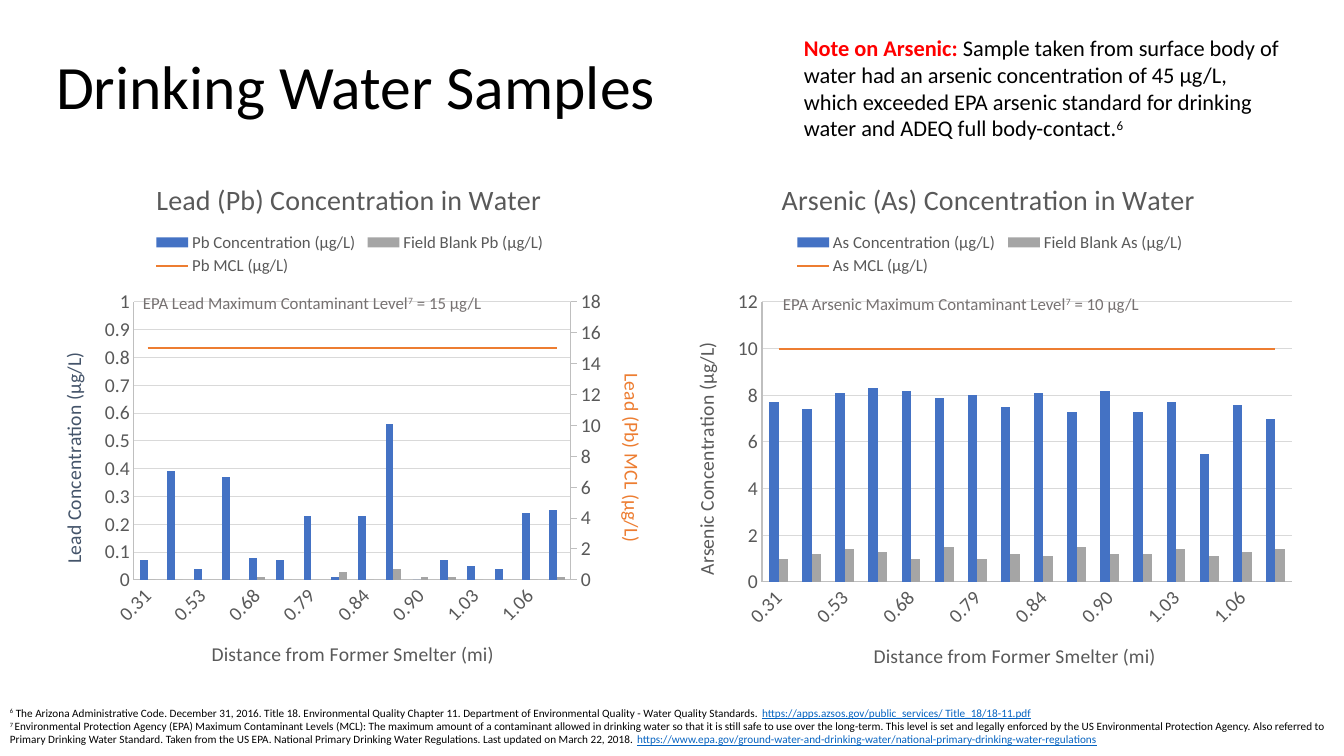
import copy
import pptx
import pptx.util
import pptx.chart.axis
import pptx.chart.data
from pptx.dml.color import RGBColor
from pptx.enum.chart import XL_CHART_TYPE, XL_LEGEND_POSITION, XL_MARKER_STYLE, XL_TICK_MARK
from pptx.enum.text import MSO_ANCHOR, PP_ALIGN
from pptx.oxml import parse_xml
from pptx.oxml.ns import nsdecls, qn

THEME = {
    "font": "Calibri",
    "black": "000000", "red": "FF0000", "link": "0563C1", "caption": "767171",
    "label": "595959", "navy": "44546A", "axis": "BFBFBF", "grid": "D9D9D9",
    "sample": "4472C4", "blank": "A5A5A5", "limit": "ED7D31",
    "title_pt": 44, "chart_title_pt": 20, "note_pt": 16, "axis_pt": 14,
    "caption_pt": 12, "chart_pt": 10, "footnote_pt": 8,
}
PX_PER_INCH = 100.8
SLIDE_SIZE = (1344, 756)
TITLE = "Drinking Water Samples"
TITLE_BOX = (46, 17, 647, 146)
DISTANCE_TITLE = "Distance from Former Smelter (mi)"
DISTANCES = [0.31, 0.37, 0.53, 0.59, 0.68, 0.7, 0.79, 0.83,
             0.84, 0.86, 0.9, 0.96, 1.03, 1.03, 1.06, 31.84]

# Plot and legend boxes are in slide px, like the chart box.
METALS = [
    dict(name="Arsenic", symbol="As", box=(672, 159, 633, 532), plot=(762, 302, 530, 280),
         legend=(790, 229, 400, 50), color="label", top=None, limit=10, limit_axis=None,
         samples=[7.7, 7.4, 8.1, 8.3, 8.2, 7.9, 8, 7.5, 8.1, 7.3, 8.2, 7.3, 7.7, 5.5, 7.6, 7],
         blanks=[1, 1.2, 1.4, 1.3, 1, 1.5, 1, 1.2, 1.1, 1.5, 1.2, 1.2, 1.4, 1.1, 1.3, 1.4]),
    dict(name="Lead", symbol="Pb", box=(39, 159, 620, 530), plot=(134, 302, 437, 278),
         legend=(150, 229, 400, 50), color="navy", top=1, limit=15,
         limit_axis=("Lead (Pb) MCL (µg/L)", 0, 18),
         samples=[0.07, 0.39, 0.04, 0.37, 0.08, 0.07, 0.23, 0.01,
                  0.23, 0.56, 0, 0.07, 0.05, 0.04, 0.24, 0.25],
         blanks=[0, 0, 0, 0, 0.01, 0, 0, 0.03, 0, 0.04, 0.01, 0.01, 0, 0, 0, 0.01]),
]

# Each run is its text followed by its styles: a theme colour, "bold", "super" or "underline".
TEXTS = [
    ((133, 288, 386, 27), "caption_pt", "caption",
     [[("EPA Lead Maximum Contaminant Level",), ("7", "super"), (" = 15 µg/L",)]]),
    ((773, 289, 386, 27), "caption_pt", "caption",
     [[("EPA Arsenic Maximum Contaminant Level",), ("7", "super"), (" = 10 µg/L",)]]),
    ((0, 701, 1344, 50), "footnote_pt", "black", [
        [("6", "super"),
         (" The Arizona Administrative Code. December 31, 2016. Title 18. Environmental Quality "
          "Chapter 11. Department of Environmental Quality - Water Quality Standards. ",),
         ("https://apps.azsos.gov/public_services/ Title_18/18-11.pdf", "link", "underline")],
        [("7 ", "super"),
         ("Environmental Protection Agency (EPA) Maximum Contaminant Levels (MCL): The maximum "
          "amount of a contaminant allowed in drinking water so that it is still safe to use over "
          "the long-term. This level is set and legally enforced by the US Environmental "
          "Protection Agency. Also referred to Primary Drinking Water Standard. Taken from the US "
          "EPA. National Primary Drinking Water Regulations. Last updated on March 22, 2018. ",),
         ("https://www.epa.gov/ground-water-and-drinking-water/"
          "national-primary-drinking-water-regulations", "link", "underline")]]),
    ((794, 29, 498, 119), "note_pt", "black",
     [[("Note on Arsenic:", "red", "bold"),
       (" Sample taken from surface body of water had an arsenic concentration of 45 µg/L, which "
        "exceeded EPA arsenic standard for drinking water and ADEQ full body-contact.",),
       ("6", "super")]]),
]

def px(*lengths):
    return [pptx.util.Emu(round(n * 914400 / PX_PER_INCH)) for n in lengths]

def rgb(color):
    return RGBColor.from_string(THEME[color])

def style_font(font, size, color, bold=False):
    font.name, font.size, font.bold = THEME["font"], pptx.util.Pt(THEME[size]), bold
    font.color.rgb = rgb(color)

def style_line(line, color, width=0.75):
    line.color.rgb, line.width = rgb(color), pptx.util.Pt(width)

def add_text(slide, box, size, color, paragraphs):
    frame = slide.shapes.add_textbox(*px(*box)).text_frame
    frame.word_wrap = True
    for index, runs in enumerate(paragraphs):
        paragraph = frame.add_paragraph() if index else frame.paragraphs[0]
        for text, *styles in runs:
            run = paragraph.add_run()
            run.text = text
            run_color = next((style for style in styles if style in THEME), color)
            style_font(run.font, size, run_color, "bold" in styles)
            run.font.underline = "underline" in styles
            if "super" in styles:
                run.font._element.set("baseline", "30000")

def set_title(title, text, size, color, degrees=0):
    title.text_frame.text = text
    style_font(title.text_frame.paragraphs[0].runs[0].font, size, color)
    body = title.text_frame._txBody.find(qn("a:bodyPr"))
    body.set("rot", str(degrees * 60000))
    body.set("vert", "horz")

def style_axis(axis, title, color, degrees):
    set_title(axis.axis_title, title, "axis_pt", color, degrees)
    style_font(axis.tick_labels.font, "axis_pt", "label")
    style_line(axis.format.line, "axis")
    axis.major_tick_mark = axis.minor_tick_mark = XL_TICK_MARK.NONE

def drop(parent, tag):
    for child in parent.findall(qn(tag)):
        parent.remove(child)

def layout_xml(box, chart_box, target=""):
    """Manual layout with the box as shares of the chart box."""
    left, top, width, height = chart_box
    shares = dict(x=(box[0] - left) / width, y=(box[1] - top) / height,
                  w=box[2] / width, h=box[3] / height)
    values = "".join(f'<c:{key} val="{share:.4f}"/>' for key, share in shares.items())
    return parse_xml(f'<c:layout {nsdecls("c")}><c:manualLayout>{target}<c:xMode val="edge"/>'
                     f'<c:yMode val="edge"/>{values}</c:manualLayout></c:layout>')

def move_limit_to_line(plot_area):
    bars = plot_area.find(qn("c:barChart"))
    limit = bars.findall(qn("c:ser"))[-1]
    drop(limit, "c:invertIfNegative")
    line = parse_xml(f'<c:lineChart {nsdecls("c")}><c:grouping val="standard"/>'
                     '<c:varyColors val="0"/><c:marker val="1"/></c:lineChart>')
    line.insert(2, limit)
    line.extend(copy.deepcopy(bars.findall(qn("c:axId"))))
    bars.addnext(line)
    return line

def add_limit_axis(plot_area, line, title, low, high):
    """Give the limit line its own value axis on the right."""
    first_axes = [plot_area.find(qn(tag)) for tag in ("c:catAx", "c:valAx")]
    distance, value = copy.deepcopy(first_axes)
    second = {axis.find(qn("c:axId")).get("val"): str(5001 + index)
              for index, axis in enumerate(first_axes)}
    linked = [axis.find(qn(tag)) for axis in (distance, value) for tag in ("c:axId", "c:crossAx")]
    for node in linked + line.findall(qn("c:axId")):
        node.set("val", second[node.get("val")])
    first_axes[1].addnext(value)
    value.addnext(distance)
    distance.find(qn("c:delete")).set("val", "1")
    drop(distance, "c:title")
    value.find(qn("c:axPos")).set("val", "r")
    value.find(qn("c:crosses")).set("val", "max")
    right = pptx.chart.axis.ValueAxis(value)
    right.has_major_gridlines = False
    style_axis(right, title, "limit", 90)
    right.major_tick_mark = XL_TICK_MARK.OUTSIDE
    right.minimum_scale, right.maximum_scale = low, high

def add_metal_chart(slide, metal):
    name, symbol, box = metal["name"], metal["symbol"], metal["box"]
    data = pptx.chart.data.CategoryChartData()
    data.categories = DISTANCES
    data.categories.number_format = "0.00"
    data.add_series(f"{symbol} Concentration (µg/L)", metal["samples"])
    data.add_series(f"Field Blank {symbol} (µg/L)", metal["blanks"])
    data.add_series(f"{symbol} MCL (µg/L)", [metal["limit"]] * len(DISTANCES))
    chart = slide.shapes.add_chart(XL_CHART_TYPE.COLUMN_CLUSTERED, *px(*box), data).chart
    style_font(chart.font, "chart_pt", "black")
    set_title(chart.chart_title, f"{name} ({symbol}) Concentration in Water",
              "chart_title_pt", "label")
    chart.has_legend = True
    chart.legend.position, chart.legend.include_in_layout = XL_LEGEND_POSITION.TOP, False
    style_font(chart.legend.font, "caption_pt", "label")

    distance, value = chart.category_axis, chart.value_axis
    style_axis(distance, DISTANCE_TITLE, "label", 0)
    distance.tick_labels.number_format = "0.00"
    distance.tick_labels.number_format_is_linked = False
    style_axis(value, f"{name} Concentration (µg/L)", metal["color"], -90)
    style_line(value.major_gridlines.format.line, "grid")
    value.minimum_scale, value.maximum_scale = 0, metal["top"]

    plot_area, legend = (chart.element.find(".//" + qn(t)) for t in ("c:plotArea", "c:legend"))
    line = move_limit_to_line(plot_area)
    if metal["limit_axis"]:
        add_limit_axis(plot_area, line, *metal["limit_axis"])
    bars, limits = chart.plots
    bars.gap_width, bars.overlap, bars.vary_by_categories = 150, 0, False
    for series, color in zip(bars.series, ("sample", "blank")):
        series.format.fill.solid()
        series.format.fill.fore_color.rgb = rgb(color)
    limit = limits.series[0]
    style_line(limit.format.line, "limit", 1.5)
    limit.marker.style, limit.smooth = XL_MARKER_STYLE.NONE, False

    drop(plot_area, "c:layout")
    plot_area.insert(0, layout_xml(metal["plot"], box, '<c:layoutTarget val="inner"/>'))
    drop(legend, "c:layout")
    legend.find(qn("c:legendPos")).addnext(layout_xml(metal["legend"], box))
    labels = plot_area.find(qn("c:catAx")).find(qn("c:txPr")).find(qn("a:bodyPr"))
    labels.set("rot", str(-45 * 60000))

deck = pptx.Presentation()
deck.slide_width, deck.slide_height = px(*SLIDE_SIZE)
slide = deck.slides.add_slide(deck.slide_layouts[5])
title = slide.shapes.title
title.left, title.top, title.width, title.height = px(*TITLE_BOX)
title.text_frame.text = TITLE
title.text_frame.vertical_anchor = MSO_ANCHOR.MIDDLE
heading = title.text_frame.paragraphs[0]
heading.alignment, heading.line_spacing = PP_ALIGN.LEFT, 0.9
style_font(heading.runs[0].font, "title_pt", "black")
for metal in METALS:
    add_metal_chart(slide, metal)
for text in TEXTS:
    add_text(slide, *text)
deck.save("out.pptx")
